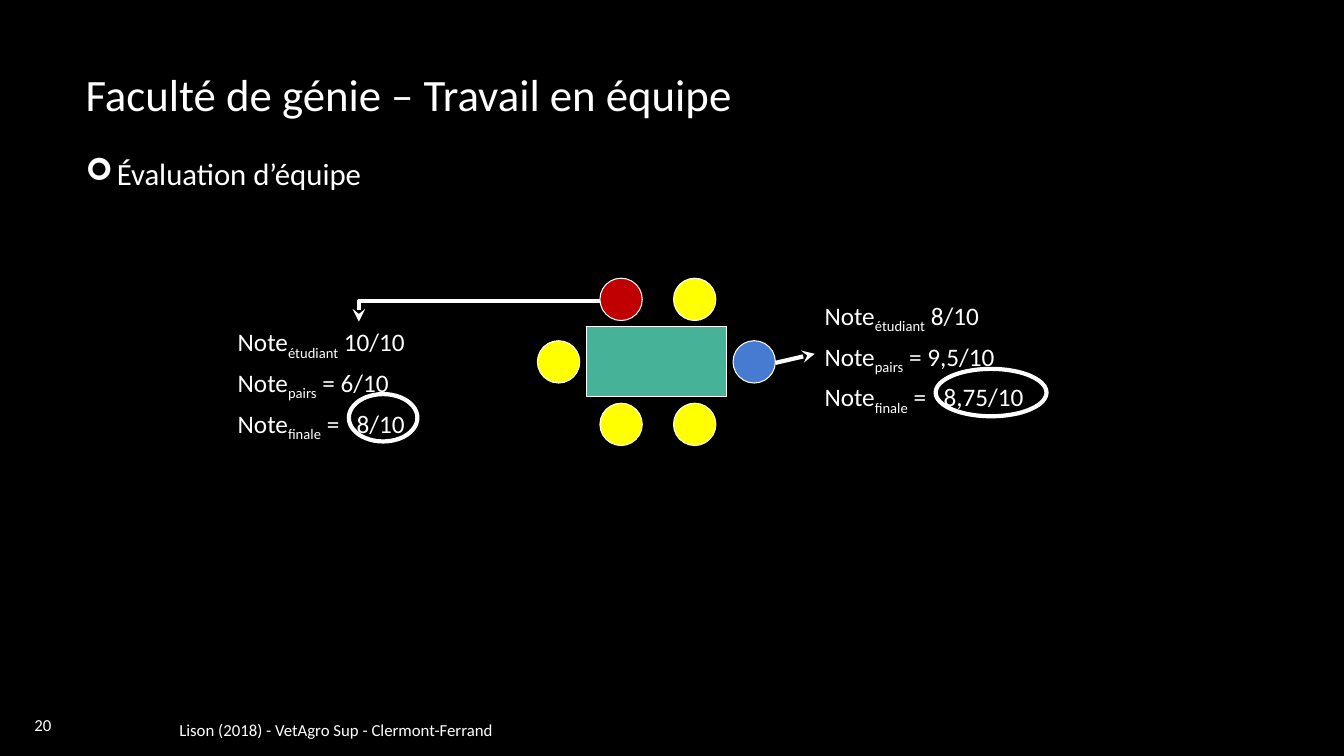
from dataclasses import dataclass

from lxml import etree
from pptx import Presentation
from pptx.dml.color import RGBColor
from pptx.enum.shapes import MSO_CONNECTOR, MSO_SHAPE
from pptx.enum.text import MSO_ANCHOR, PP_ALIGN
from pptx.oxml.ns import qn
from pptx.util import Inches, Pt

OVAL, RECTANGLE = MSO_SHAPE.OVAL, MSO_SHAPE.RECTANGLE
STRAIGHT, ELBOW = MSO_CONNECTOR.STRAIGHT, MSO_CONNECTOR.ELBOW
TOP, MIDDLE = MSO_ANCHOR.TOP, MSO_ANCHOR.MIDDLE
LEFT, CENTER = PP_ALIGN.LEFT, PP_ALIGN.CENTER


@dataclass(frozen=True)
class Theme:
    """Colours, font and sizes of the slide."""

    font: str = "Calibri"
    background: str = "000000"
    ink: str = "FFFFFF"
    table: str = "46B298"
    student: str = "FFFF00"
    weak_student: str = "C00000"
    strong_student: str = "477BD1"
    title: float = 32
    body: float = 22
    grade: float = 18
    grade_gap: float = 4.5
    footer: float = 12
    thin: float = 0.75
    thick: float = 3


THEME = Theme()
SEAT = 0.42


def style_span(span, size):
    """Give a run the theme font, ink and a size."""
    span.font.name = THEME.font
    span.font.size = Pt(size)
    span.font.color.rgb = RGBColor.from_string(THEME.ink)


def add_box(page, left, top, width, height, anchor):
    """Add an empty wrapping text box."""
    box = page.shapes.add_textbox(Inches(left), Inches(top), Inches(width), Inches(height))
    box.text_frame.word_wrap = True
    box.text_frame.vertical_anchor = anchor
    return box


def add_text(page, text, area, size, anchor=MIDDLE, align=LEFT):
    """Add a one-paragraph text box and return its paragraph."""
    para = add_box(page, *area, anchor).text_frame.paragraphs[0]
    para.text = text
    para.alignment = align
    style_span(para.runs[0], size)
    return para


def add_bullet(para):
    """Give a paragraph an arrowhead bullet with a hanging indent."""
    properties = para._p.get_or_add_pPr()
    properties.set("marL", str(Inches(0.31)))
    properties.set("indent", str(Inches(-0.31)))
    colour = etree.SubElement(properties, qn("a:buClr"))
    etree.SubElement(colour, qn("a:srgbClr"), val=THEME.ink)
    etree.SubElement(properties, qn("a:buFont"), typeface="Wingdings")
    etree.SubElement(properties, qn("a:buChar"), char="➢")


def add_tab(para, position):
    """Set one left tab stop on a paragraph."""
    stops = etree.SubElement(para._p.get_or_add_pPr(), qn("a:tabLst"))
    etree.SubElement(stops, qn("a:tab"), pos=str(Inches(position)), algn="l")


def add_grades(page, left, top, student, peers, final):
    """Add the three grades of one student."""
    frame = add_box(page, left, top, 2.6, 1.15, TOP).text_frame
    grades = (("étudiant", f" {student}"), ("pairs", f" = {peers}"), ("finale", f" =\t{final}"))
    for index, (subscript, value) in enumerate(grades):
        para = frame.add_paragraph() if index else frame.paragraphs[0]
        if index:
            para.space_before = Pt(THEME.grade_gap)
        add_tab(para, 1.18)
        for text in ("Note", subscript, value):
            span = para.add_run()
            span.text = text
            style_span(span, THEME.grade)
        para.runs[1].font._element.set("baseline", "-25000")


def add_figure(page, kind, left, top, width, height, fill=None, weight=THEME.thin):
    """Add an outlined shape, hollow unless a fill is given."""
    shape = page.shapes.add_shape(kind, Inches(left), Inches(top), Inches(width), Inches(height))
    shape.shadow.inherit = False
    shape.line.color.rgb = RGBColor.from_string(THEME.ink)
    shape.line.width = Pt(weight)
    if fill:
        shape.fill.solid()
        shape.fill.fore_color.rgb = RGBColor.from_string(fill)
    else:
        shape.fill.background()


def add_arrow(page, kind, start, end):
    """Add a thick arrow; an elbow turns once."""
    arrow = page.shapes.add_connector(kind, *map(Inches, start + end))
    arrow.line.color.rgb = RGBColor.from_string(THEME.ink)
    arrow.line.width = Pt(THEME.thick)
    properties = arrow._element.spPr
    if kind == ELBOW:
        properties.find(qn("a:prstGeom")).set("prst", "bentConnector2")
    etree.SubElement(arrow.line._get_or_add_ln(), qn("a:tailEnd"), type="stealth")
    etree.SubElement(properties, qn("a:effectLst"))


def add_team(page):
    """Draw the table with its six students."""
    add_figure(page, RECTANGLE, 5.82, 3.24, 1.39, 0.69, THEME.table)
    seats = (
        (5.33, 3.38, THEME.student),
        (5.95, 4, THEME.student),
        (6.68, 4, THEME.student),
        (7.27, 3.38, THEME.strong_student),
        (5.95, 2.76, THEME.weak_student),
        (6.68, 2.76, THEME.student),
    )
    for left, top, fill in seats:
        add_figure(page, OVAL, left, top, SEAT, SEAT, fill)


def main():
    """Build and save the slide."""
    deck = Presentation()
    deck.slide_width, deck.slide_height = Inches(13.33), Inches(7.5)
    page = deck.slides.add_slide(deck.slide_layouts[6])
    page.background.fill.solid()
    page.background.fill.fore_color.rgb = RGBColor.from_string(THEME.background)

    add_text(page, "Faculté de génie – Travail en équipe", (0.75, 0.59, 11.08, 0.67), THEME.title)
    add_bullet(add_text(page, "Évaluation d’équipe", (0.75, 1.49, 11.08, 5.32), THEME.body, TOP))
    add_text(page, "Lison (2018) - VetAgro Sup - Clermont-Ferrand", (1.68, 6.98, 4.28, 0.52), THEME.footer)
    add_text(page, "20", (0.18, 6.93, 0.49, 0.52), THEME.footer, align=CENTER)

    add_team(page)
    add_grades(page, 8.08, 2.93, "8/10", "9,5/10", "8,75/10")
    add_arrow(page, STRAIGHT, (7.69, 3.6), (8.08, 3.51))
    add_grades(page, 2.26, 3.19, "10/10", "6/10", "8/10")
    add_arrow(page, ELBOW, (5.95, 2.99), (3.56, 3.19))
    add_figure(page, OVAL, 3.46, 3.91, 0.68, 0.47, weight=THEME.thick)
    add_figure(page, OVAL, 9.28, 3.66, 1.1, 0.47, weight=THEME.thick)

    deck.save("out.pptx")


if __name__ == "__main__":
    main()
